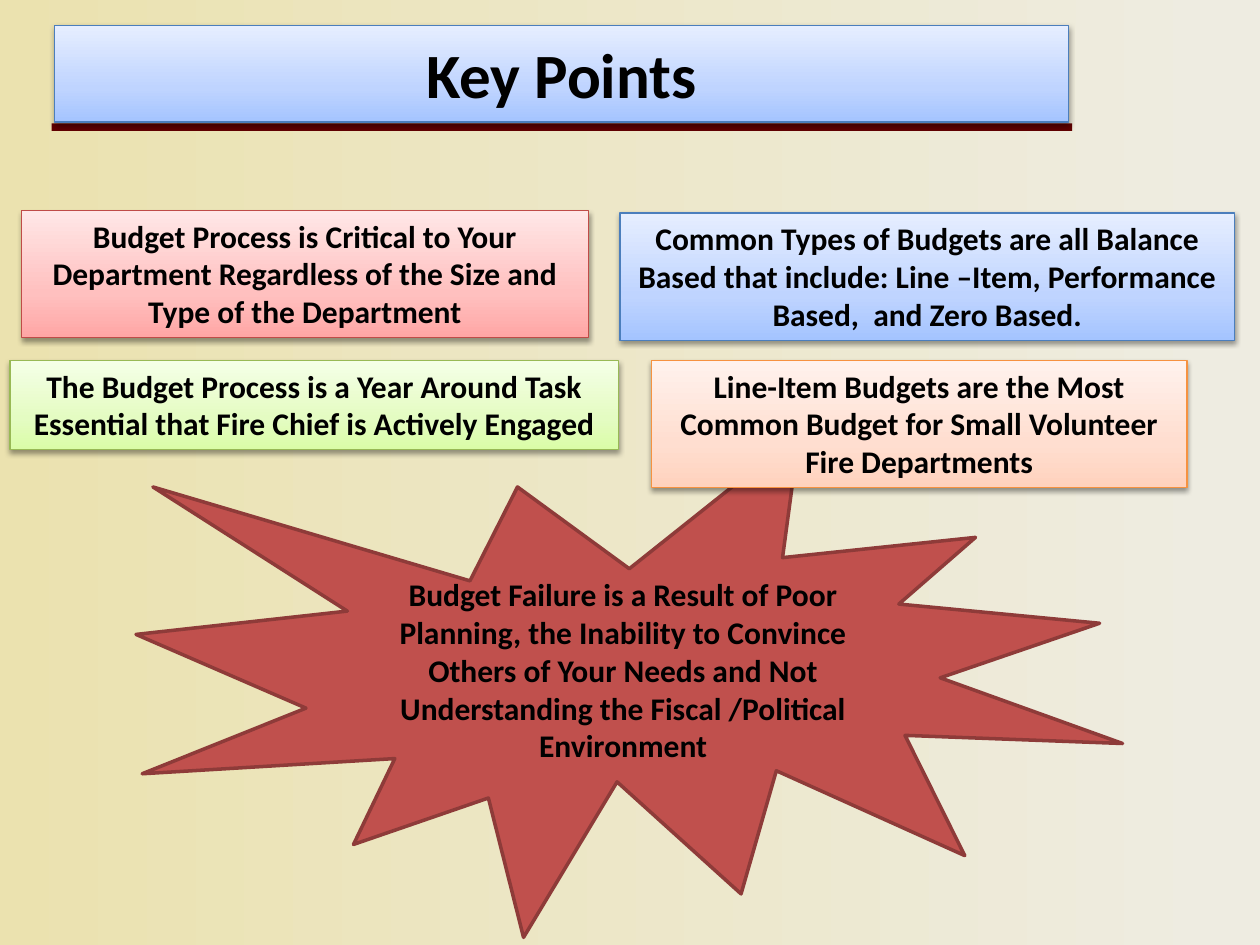
from copy import deepcopy
from dataclasses import dataclass

from lxml import etree
from pptx import Presentation
from pptx.dml.color import RGBColor
from pptx.enum import shapes, text
from pptx.oxml import ns
from pptx.util import Inches, Pt

BLACK = RGBColor(0x00, 0x00, 0x00)
WHITE = RGBColor(0xFF, 0xFF, 0xFF)
MAROON = RGBColor(0x63, 0x00, 0x00)
BRICK = RGBColor(0xC0, 0x50, 0x4D)
DARK_BRICK = RGBColor(0x8E, 0x3B, 0x39)
SAND = RGBColor(0xEB, 0xE2, 0xAF)
CREAM = RGBColor(0xEE, 0xEC, 0xE1)
FONT = "Calibri"


@dataclass(frozen=True)
class Palette:
    bottom: RGBColor
    middle: RGBColor
    top: RGBColor
    line: RGBColor

    @property
    def stops(self) -> list:
        return [(0, self.bottom), (0.35, self.middle), (1, self.top)]


@dataclass(frozen=True)
class Panel:
    wording: str
    left: float
    top: float
    width: float
    height: float
    palette: Palette


BLUE = Palette(RGBColor(0xA4, 0xC4, 0xFF), RGBColor(0xBF, 0xD4, 0xFF),
               RGBColor(0xE6, 0xEE, 0xFF), RGBColor(0x4B, 0x7E, 0xBC))
RED = Palette(RGBColor(0xFF, 0xA6, 0xA5), RGBColor(0xFF, 0xC0, 0xBF),
              RGBColor(0xFF, 0xE7, 0xE7), RGBColor(0xBF, 0x4C, 0x48))
GREEN = Palette(RGBColor(0xDA, 0xFD, 0xA7), RGBColor(0xE4, 0xFC, 0xC2),
                RGBColor(0xF5, 0xFF, 0xE7), RGBColor(0x98, 0xB9, 0x55))
ORANGE = Palette(RGBColor(0xFF, 0xD2, 0xBD), RGBColor(0xFF, 0xDE, 0xD0),
                 RGBColor(0xFF, 0xF2, 0xED), RGBColor(0xF6, 0x92, 0x40))

TITLE = Panel("Key Points", 0.43, 0.2, 8.05, 0.77, BLUE)
POINTS = [
    Panel("Budget Process is Critical to Your Department Regardless of the Size "
          "and Type of the Department", 0.17, 1.67, 4.5, 1.01, RED),
    Panel("The Budget Process is a Year Around Task Essential that Fire Chief "
          "is Actively Engaged", 0.08, 2.86, 4.83, 0.71, GREEN),
    Panel("Common Types of Budgets are all Balance Based that include: "
          "Line –Item, Performance Based,  and Zero Based.",
          4.92, 1.69, 4.88, 1.01, BLUE),
    Panel("Line-Item Budgets are the Most Common Budget for Small Volunteer "
          "Fire Departments", 5.17, 2.86, 4.25, 1.01, ORANGE),
]
WARNING = ("Budget Failure is a Result of Poor Planning, the Inability to Convince "
           "Others of Your Needs and Not Understanding the Fiscal /Political "
           "Environment")


def apply_gradient(fill, owner, stops: list, angle: float) -> None:
    """Fill with any number of stops; owner is the element holding the fill."""
    fill.gradient()
    fill.gradient_angle = angle
    stop_list = owner.find(".//" + ns.qn("a:gsLst"))
    while len(stop_list) < len(stops):
        stop_list.append(deepcopy(stop_list[0]))
    for stop, (position, color) in zip(fill.gradient_stops, stops):
        stop.position = position
        stop.color.rgb = color


def add_soft_shadow(shape) -> None:
    effects = shape.element.spPr.find(ns.qn("a:effectLst"))
    shadow = etree.SubElement(effects, ns.qn("a:outerShdw"),
                              blurRad=str(Pt(3.1)), dist=str(Pt(1.6)),
                              dir=str(90 * 60000), rotWithShape="0")
    color = etree.SubElement(shadow, ns.qn("a:srgbClr"), val=str(BLACK))
    etree.SubElement(color, ns.qn("a:alpha"), val="38000")


def add_plain_shape(slide, kind, left: float, top: float, width: float, height: float):
    shape = slide.shapes.add_shape(kind, Inches(left), Inches(top),
                                   Inches(width), Inches(height))
    shape.shadow.inherit = False
    return shape


def write_text(shape, wording: str, *, size: float = 18,
               anchor=text.MSO_ANCHOR.MIDDLE, grow: bool = False,
               outline: RGBColor | None = None) -> None:
    frame = shape.text_frame
    frame.word_wrap = True
    frame.vertical_anchor = anchor
    if grow:
        frame.auto_size = text.MSO_AUTO_SIZE.SHAPE_TO_FIT_TEXT
    paragraph = frame.paragraphs[0]
    paragraph.alignment = text.PP_ALIGN.CENTER
    run = paragraph.add_run()
    run.text = wording
    run.font.name = FONT
    run.font.size = Pt(size)
    run.font.bold = True
    run.font.color.rgb = BLACK
    if outline is not None:
        line = etree.Element(ns.qn("a:ln"), w=str(Pt(0.75)))
        solid = etree.SubElement(line, ns.qn("a:solidFill"))
        etree.SubElement(solid, ns.qn("a:srgbClr"), val=str(outline))
        run.font._element.insert(0, line)


def draw_panel(slide, panel: Panel, **text_format) -> None:
    shape = add_plain_shape(slide, shapes.MSO_SHAPE.RECTANGLE, panel.left, panel.top,
                            panel.width, panel.height)
    apply_gradient(shape.fill, shape.element.spPr, panel.palette.stops, 90)
    shape.line.color.rgb = panel.palette.line
    shape.line.width = Pt(0.75)
    add_soft_shadow(shape)
    write_text(shape, panel.wording, **text_format)


def draw_title_rule(slide) -> None:
    rule = add_plain_shape(slide, shapes.MSO_SHAPE.RECTANGLE, 0.41, 0.98, 8.1, 0.06)
    rule.fill.solid()
    rule.fill.fore_color.rgb = MAROON
    rule.line.fill.background()


def draw_warning(slide) -> None:
    burst = add_plain_shape(slide, shapes.MSO_SHAPE.EXPLOSION1, 1.08, 3.44, 7.83, 4)
    burst.fill.solid()
    burst.fill.fore_color.rgb = BRICK
    burst.line.color.rgb = DARK_BRICK
    burst.line.width = Pt(2)
    write_text(burst, WARNING)


def main() -> None:
    deck = Presentation()
    deck.slide_width, deck.slide_height = Inches(10), Inches(7.5)
    slide = deck.slides.add_slide(deck.slide_layouts[6])
    apply_gradient(slide.background.fill, slide.element,
                   [(0, SAND), (0.97, CREAM)], 0)
    draw_title_rule(slide)
    draw_warning(slide)
    draw_panel(slide, TITLE, size=36, outline=WHITE)
    for point in POINTS:
        draw_panel(slide, point, anchor=text.MSO_ANCHOR.TOP, grow=True)
    deck.save("out.pptx")


if __name__ == "__main__":
    main()
